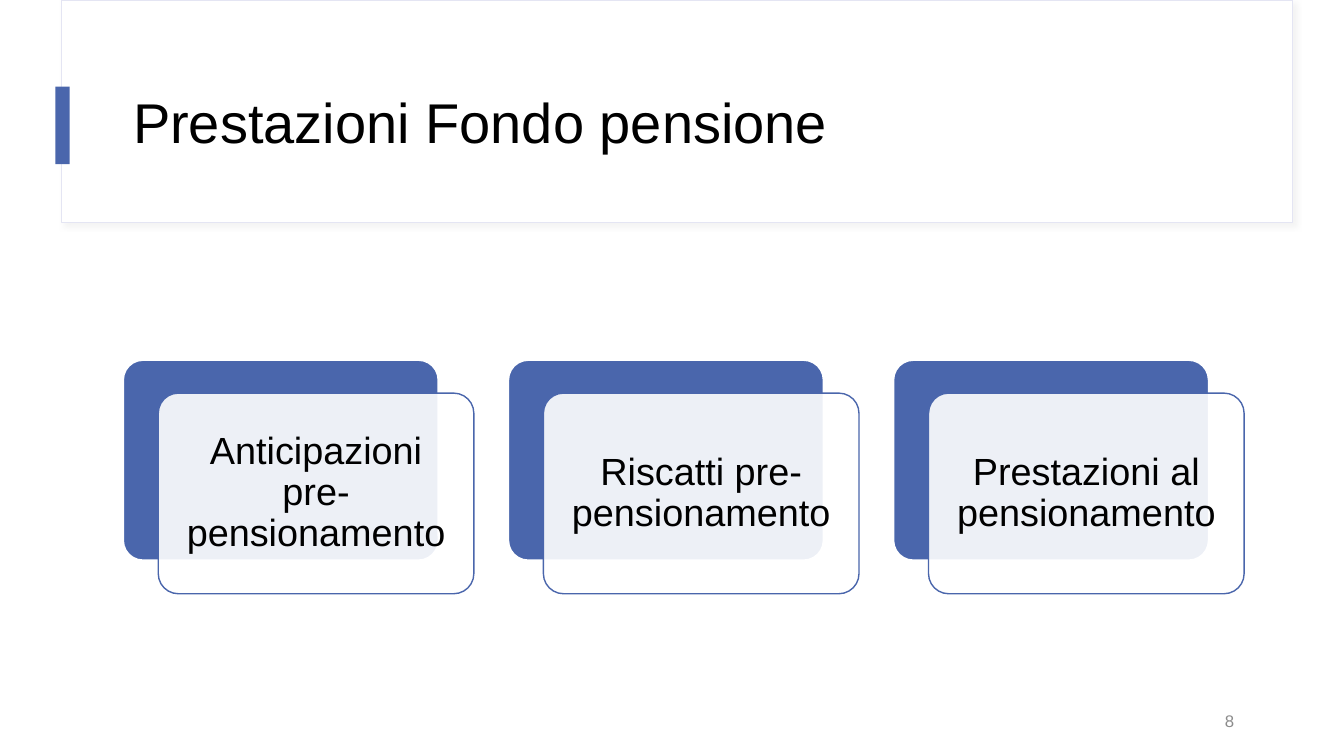
"""Build the slide on pension fund benefits."""
import pptx
import pptx.util
import pptx.dml.color
import pptx.enum.shapes
import pptx.enum.text
import pptx.oxml
import pptx.oxml.ns

Inches, Pt = pptx.util.Inches, pptx.util.Pt
RGBColor = pptx.dml.color.RGBColor
SHAPE = pptx.enum.shapes.MSO_SHAPE
ALIGN = pptx.enum.text.PP_ALIGN
MIDDLE = pptx.enum.text.MSO_ANCHOR.MIDDLE

TITLE = "Prestazioni Fondo pensione"
BENEFITS = [
    "Anticipazioni pre-pensionamento",
    "Riscatti pre-pensionamento",
    "Prestazioni al pensionamento",
]
PAGE = "8"

FONT = "Arial"
BLUE = RGBColor(0x4A, 0x66, 0xAC)
WHITE = RGBColor(0xFF, 0xFF, 0xFF)
BLACK = RGBColor(0x00, 0x00, 0x00)
GREY = RGBColor(0x8C, 0x8C, 0x8C)
LILAC = RGBColor(0xE4, 0xE5, 0xF3)

LEFT, TOP, PITCH = 1.22, 3.57, 3.82
CARD_W, CARD_H = 3.13, 1.99
SHIFT_X, SHIFT_Y = 0.35, 0.33
INSET = 0.17

SHADOW = (
    '<a:effectLst xmlns:a="http://schemas.openxmlformats.org/drawingml/2006/main">'
    '<a:outerShdw blurRad="50800" dist="38100" dir="2700000" algn="tl" rotWithShape="0">'
    '<a:srgbClr val="D9D9D9"><a:alpha val="30000"/></a:srgbClr>'
    '</a:outerShdw></a:effectLst>'
)


def add_box(s, kind, x, y, w, h, fill, line=None, width=1):
    sp = s.shapes.add_shape(kind, Inches(x), Inches(y), Inches(w), Inches(h))
    sp.shadow.inherit = False
    sp.fill.solid()
    sp.fill.fore_color.rgb = fill
    if line is None:
        sp.line.fill.background()
    else:
        sp.line.color.rgb = line
        sp.line.width = Pt(width)
    if kind == SHAPE.ROUNDED_RECTANGLE:
        sp.adjustments[0] = 0.1
    return sp


def set_text(sp, text, size, color, align, spacing=None):
    tf = sp.text_frame
    tf.word_wrap = True
    tf.vertical_anchor = MIDDLE
    p = tf.paragraphs[0]
    p.text = text
    p.alignment = align
    p.line_spacing = spacing
    p.font.name = FONT
    p.font.size = Pt(size)
    p.font.color.rgb = color
    return tf


def add_card(s, text, x):
    add_box(s, SHAPE.ROUNDED_RECTANGLE, x, TOP, CARD_W, CARD_H, BLUE, WHITE, 1.5)
    sp = add_box(s, SHAPE.ROUNDED_RECTANGLE, x + SHIFT_X, TOP + SHIFT_Y,
                 CARD_W, CARD_H, WHITE, BLUE)
    color = sp.fill._xPr.find(".//" + pptx.oxml.ns.qn("a:srgbClr"))
    color.append(pptx.oxml.parse_xml(
        '<a:alpha xmlns:a="http://schemas.openxmlformats.org/drawingml/2006/main" val="90000"/>'))
    tf = set_text(sp, text, 27, BLACK, ALIGN.CENTER, 0.9)
    tf.margin_left = tf.margin_right = Inches(INSET)
    tf.margin_top = tf.margin_bottom = Inches(INSET)


def main():
    prs = pptx.Presentation()
    prs.slide_width, prs.slide_height = Inches(13.33), Inches(7.5)
    s = prs.slides.add_slide(prs.slide_layouts[5])

    band = add_box(s, SHAPE.RECTANGLE, 0.61, 0, 12.21, 2.21, WHITE, LILAC, 0.75)
    effects = band._element.spPr.find(pptx.oxml.ns.qn("a:effectLst"))
    effects.getparent().replace(effects, pptx.oxml.parse_xml(SHADOW))
    add_box(s, SHAPE.RECTANGLE, 0.55, 0.86, 0.14, 0.77, BLUE)

    title = s.shapes.title
    s.shapes._spTree.append(title._element)
    title.left, title.top = Inches(LEFT), Inches(0.6)
    title.width, title.height = Inches(11.12), Inches(1.29)
    set_text(title, TITLE, 40, BLACK, ALIGN.LEFT, 0.9)

    page = s.shapes.add_textbox(Inches(9.34), Inches(6.95), Inches(3), Inches(0.4))
    set_text(page, PAGE, 12, GREY, ALIGN.RIGHT)

    for i, benefit in enumerate(BENEFITS):
        add_card(s, benefit, LEFT + i * PITCH)

    prs.save("out.pptx")


if __name__ == "__main__":
    main()
